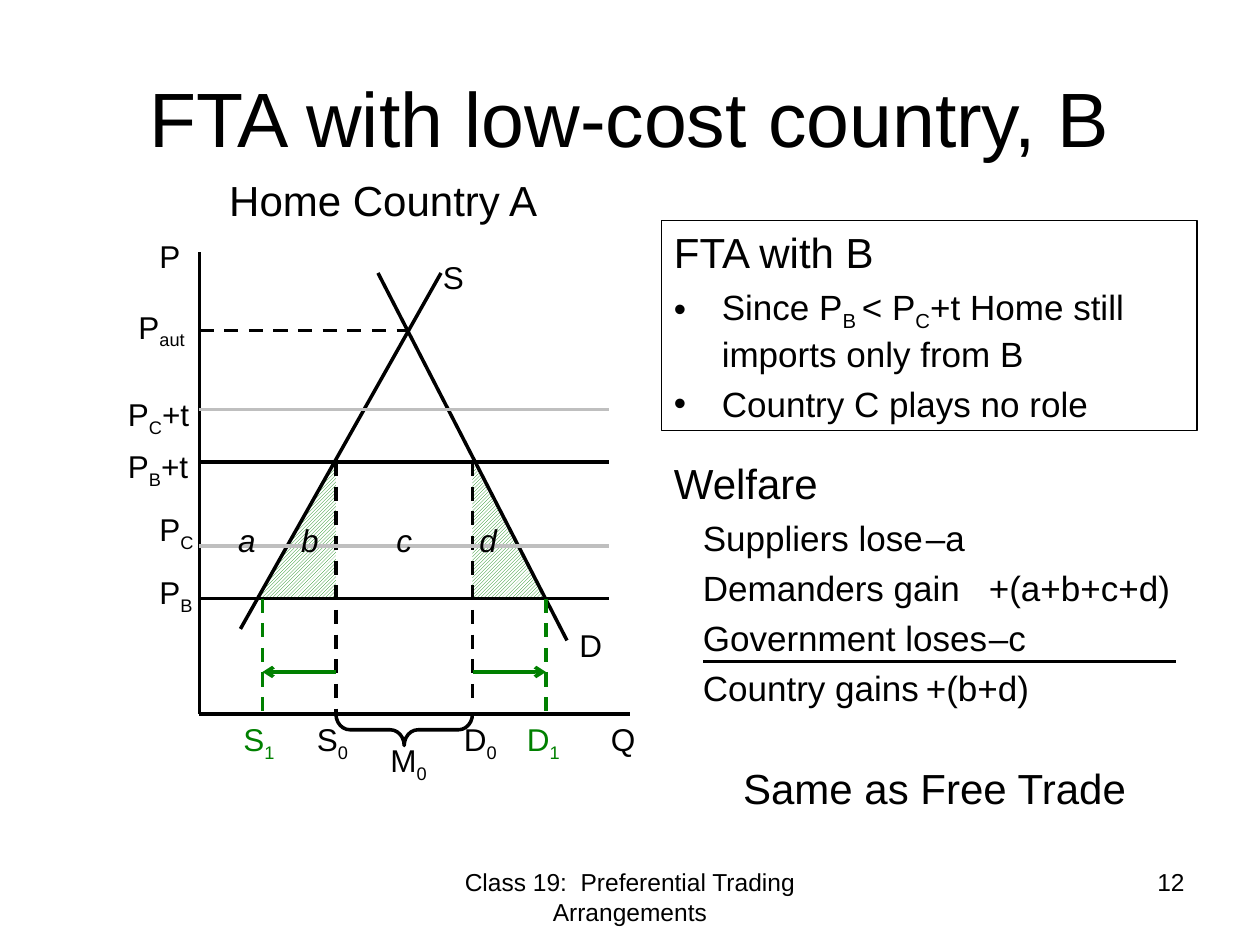
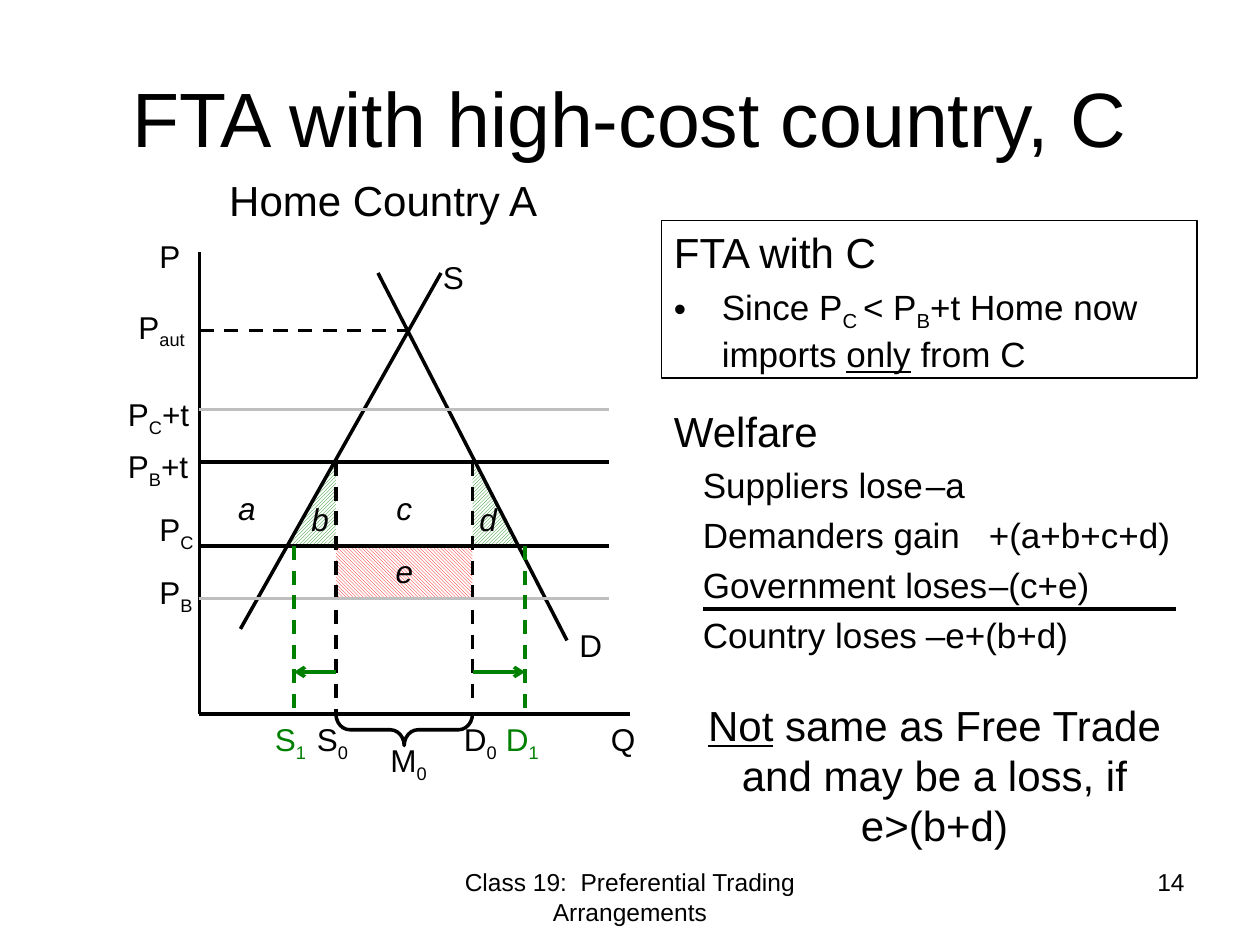
from lxml import etree
from pptx import Presentation
from pptx.dml.color import RGBColor
from pptx.enum.dml import MSO_LINE, MSO_PATTERN as Pattern
from pptx.enum.shapes import MSO_CONNECTOR, MSO_SHAPE as Shape
from pptx.enum.text import MSO_ANCHOR as Anchor, PP_ALIGN as Align
from pptx.oxml.ns import qn
from pptx.util import Inches, Pt

# ---- Content: "_" encloses a subscript, "*" encloses underlined text ----
FOOTER = "Class 19:  Preferential Trading Arrangements"
DIAGRAM_TITLE = "Home Country A"
SLIDES = [
    {
        "title": "FTA with low-cost country, B",
        "number": "12",
        "case": [("heading", "FTA with B"),
                 ("bullet", "Since P_B _< P_C_+t Home still imports only from B"),
                 ("bullet", "Country C plays no role")],
        "case_height": 20,
        "welfare": [("heading", "Welfare"),
                    ("row", "Suppliers lose\t–a"),
                    ("row", "Demanders gain\t+(a+b+c+d)"),
                    ("row", "Government loses\t–c"),
                    ("row", "Country gains\t+(b+d)")],
        "welfare_top": 43,
        "verdict": ["Same as Free Trade"],
        "verdict_top": 72,
        "new_price": "PB", "inactive_prices": ("PC+t", "PC"),
        "new_supply": 25, "new_demand": 52,
        "new_labels": {"S_1_": 22, "D_1_": 49},
        "areas": {"a": (19, 49), "b": (25, 49), "c": (34, 49), "d": (42, 49)},
    },
    {
        "title": "FTA with high-cost country, C",
        "number": "14",
        "case": [("heading", "FTA with C"),
                 ("bullet", "Since P_C _< P_B_+t Home now imports *only* from C")],
        "case_height": 15,
        "welfare": [("heading", "Welfare"),
                    ("row", "Suppliers lose\t–a"),
                    ("row", "Demanders gain\t+(a+b+c+d)"),
                    ("row", "Government loses\t–(c+e)"),
                    ("row", "Country loses\t–e+(b+d)")],
        "welfare_top": 38,
        "verdict": ["*Not* same as Free Trade", "and may be a loss, if e>(b+d)"],
        "verdict_top": 66,
        "new_price": "PC", "inactive_prices": ("PC+t", "PB"),
        "new_supply": 28, "new_demand": 50,
        "new_labels": {"S_1_": 25, "D_1_": 47},
        "areas": {"a": (19, 46), "b": (26, 47), "c": (34, 46), "d": (42, 47),
                  "e": (34, 52)},
    },
]

# ---- Grid: 12 units to the inch, so the slide is 120 by 90 ----
COLUMNS, ROWS = 120, 90
AXIS_LEFT, AXIS_BOTTOM, AXIS_TOP, AXIS_RIGHT = 19, 68, 24, 60
PRICES = {"PC+t": 39, "PB+t": 44, "PC": 52, "PB": 57}
PRICE_LINE_END = 58
OLD_SUPPLY, OLD_DEMAND = 32, 45
ARROW_ROW = 64
SUPPLY = ((42, 26), (22.9, 59.9))
DEMAND = ((36, 26), (54, 61))
AUTARKY = (39, 31.5)
PANEL_LEFT, PANEL_WIDTH = 63, 51

# Label: left, top, width
LABELS = {
    "P": (14, 22, 9), "S": (41, 24, 9), "P_aut_": (12, 28.7, 9),
    "P_C_+t": (11, 37, 9), "P_B_+t": (11, 42, 9),
    "P_C_": (14, 48, 6), "P_B_": (14, 54, 6), "D": (54, 59, 5),
    "Q": (57, 68, 9), "S_0_": (29, 68, 6), "D_0_": (43, 68, 6),
    "M_0_": (36, 70, 7),
}
LABEL_HEIGHT = 4.8

FONT = "Arial"
COLORS = {"ink": "000000", "paper": "FFFFFF", "inactive": "BFBFBF",
          "gain": "008000", "loss": "FF0000"}
# Style: size, left margin and first-line indent in inches, tab stop in inches
PANEL_STYLES = {"heading": (24, 0, 0, None),
                "bullet": (20, 0.38, -0.38, None),
                "row": (20, 0, 0.23, 2.54)}


def units(value):
    return Inches(value / 12)


def color(name):
    return RGBColor.from_string(COLORS[name])


def format_panel_paragraph(paragraph, kind):
    size, margin, indent, tab = PANEL_STYLES[kind]
    paragraph.space_before = Pt(0.23 * size)
    properties = paragraph._p.get_or_add_pPr()
    properties.set("marL", str(Inches(margin)))
    properties.set("indent", str(Inches(indent)))
    if kind == "bullet":
        etree.SubElement(properties, qn("a:buFont")).set("typeface", FONT)
        etree.SubElement(properties, qn("a:buChar")).set("char", "•")
    if tab:
        stop = etree.SubElement(etree.SubElement(properties, qn("a:tabLst")), qn("a:tab"))
        stop.set("pos", str(Inches(tab)))
        stop.set("algn", "l")
    return size


def write(slide, box, paragraphs, size=18, align=Align.LEFT, anchor=Anchor.TOP,
          ink="ink", italic=False, border=False):
    """Add a text box; a paragraph is a string or a (panel style, string) pair."""
    shape = slide.shapes.add_textbox(*map(units, box))
    if border:
        shape.line.color.rgb = color("ink")
        shape.line.width = Pt(0.75)
    frame = shape.text_frame
    frame.word_wrap = True
    frame.vertical_anchor = anchor
    for index, item in enumerate(paragraphs):
        paragraph = frame.paragraphs[0] if index == 0 else frame.add_paragraph()
        paragraph.alignment = align
        text, text_size = item, size
        if isinstance(item, tuple):
            kind, text = item
            text_size = format_panel_paragraph(paragraph, kind)
        for level, part in enumerate(text.split("_")):
            for mark, piece in enumerate(part.split("*")):
                if not piece:
                    continue
                run = paragraph.add_run()
                run.text = piece
                font = run.font
                font.name, font.size = FONT, Pt(text_size)
                font.color.rgb = color(ink)
                font.italic = italic
                if mark % 2:
                    font.underline = True
                if level % 2:
                    run._r.get_or_add_rPr().set("baseline", "-25000")


def draw_line(slide, start, end, ink="ink", dashed=False, arrow=False):
    line = slide.shapes.add_connector(MSO_CONNECTOR.STRAIGHT,
                                      *map(units, (*start, *end)))
    line.line.color.rgb = color(ink)
    line.line.width = Pt(2)
    if dashed:
        line.line.dash_style = MSO_LINE.DASH
    if arrow:
        outline = line.line._get_or_add_ln()
        etree.SubElement(outline, qn("a:tailEnd")).set("type", "arrow")
    etree.SubElement(line._element.spPr, qn("a:effectLst"))


def hatch(slide, preset, box, ink, pattern, mirrored=False):
    shape = slide.shapes.add_shape(preset, *map(units, box))
    shape.shadow.inherit = False
    shape.line.fill.background()
    shape.fill.patterned()
    shape.fill.pattern = pattern
    shape.fill.fore_color.rgb = color(ink)
    shape.fill.back_color.rgb = color("paper")
    if mirrored:
        shape._element.spPr.get_or_add_xfrm().set("flipH", "1")


def column_on(curve, row):
    (x1, y1), (x2, y2) = curve
    return x1 + (x2 - x1) * (row - y1) / (y2 - y1)


def draw_areas(slide, content):
    top, bottom = PRICES["PB+t"], PRICES[content["new_price"]]
    left, right = column_on(SUPPLY, bottom), column_on(DEMAND, bottom)
    height = bottom - top
    for box, mirrored in (((left, top, OLD_SUPPLY - left, height), True),
                          ((OLD_DEMAND, top, right - OLD_DEMAND, height), False)):
        hatch(slide, Shape.RIGHT_TRIANGLE, box, "gain",
              Pattern.DARK_UPWARD_DIAGONAL, mirrored)
    if "e" in content["areas"]:
        hatch(slide, Shape.RECTANGLE,
              (OLD_SUPPLY, bottom, OLD_DEMAND - OLD_SUPPLY, PRICES["PB"] - bottom),
              "loss", Pattern.DARK_DOWNWARD_DIAGONAL)


def draw_diagram(slide, content):
    draw_areas(slide, content)

    # Axes, curves and autarky price
    origin = (AXIS_LEFT, AXIS_BOTTOM)
    for start, end in ((origin, (AXIS_RIGHT, AXIS_BOTTOM)),
                       (origin, (AXIS_LEFT, AXIS_TOP)), SUPPLY, DEMAND):
        draw_line(slide, start, end)
    draw_line(slide, (AXIS_LEFT, AUTARKY[1]), AUTARKY, dashed=True)

    # Old quantities and the import brace
    draw_line(slide, (OLD_SUPPLY, PRICES["PB+t"]), (OLD_SUPPLY, AXIS_BOTTOM), dashed=True)
    draw_line(slide, (OLD_DEMAND, PRICES["PB+t"]), (OLD_DEMAND, AXIS_BOTTOM - 1), dashed=True)
    span, depth = OLD_DEMAND - OLD_SUPPLY, 3
    brace = slide.shapes.add_shape(
        Shape.LEFT_BRACE, units(OLD_SUPPLY + (span - depth) / 2),
        units(AXIS_BOTTOM + (depth - span) / 2), units(depth), units(span))
    brace.rotation = 270
    brace.adjustments[0] = 0.44
    brace.shadow.inherit = False
    brace.fill.background()
    brace.line.color.rgb = color("ink")
    brace.line.width = Pt(2)

    # Price lines
    for price, row in PRICES.items():
        ink = "inactive" if price in content["inactive_prices"] else "ink"
        draw_line(slide, (AXIS_LEFT, row), (PRICE_LINE_END, row), ink)

    # New quantities and the shifts towards them
    for old, new in ((OLD_SUPPLY, content["new_supply"]),
                     (OLD_DEMAND, content["new_demand"])):
        draw_line(slide, (new, PRICES[content["new_price"]]), (new, AXIS_BOTTOM),
                  "gain", dashed=True)
        draw_line(slide, (old, ARROW_ROW), (new, ARROW_ROW), "gain", arrow=True)

    # Labels
    for text, (left, top, width) in LABELS.items():
        write(slide, (left, top, width, LABEL_HEIGHT), [text])
    for text, left in content["new_labels"].items():
        write(slide, (left, AXIS_BOTTOM, 6, LABEL_HEIGHT), [text], ink="gain")
    for text, (left, top) in content["areas"].items():
        write(slide, (left, top, 9, LABEL_HEIGHT), [text], align=Align.CENTER, italic=True)


def draw_panels(slide, content):
    write(slide, (PANEL_LEFT, 21, PANEL_WIDTH, content["case_height"]),
          content["case"], border=True)
    top = content["welfare_top"]
    write(slide, (PANEL_LEFT, top, PANEL_WIDTH, 26), content["welfare"])
    draw_line(slide, (67, top + 20), (112, top + 20))
    write(slide, (66, content["verdict_top"], 46, 6), content["verdict"],
          size=24, align=Align.CENTER)


def draw_frame(slide, content):
    write(slide, (6, 3.6, 108, 15), [content["title"]], size=44,
          align=Align.CENTER, anchor=Anchor.MIDDLE)
    write(slide, (20, 16, 33, 6), [DIAGRAM_TITLE], size=24, align=Align.CENTER)
    write(slide, (41, 82, 38, 6.25), [FOOTER], size=14, align=Align.CENTER)
    write(slide, (86, 82, 28, 6.25), [content["number"]], size=14, align=Align.RIGHT)


def main():
    presentation = Presentation()
    presentation.slide_width, presentation.slide_height = units(COLUMNS), units(ROWS)
    for content in SLIDES:
        slide = presentation.slides.add_slide(presentation.slide_layouts[6])
        draw_diagram(slide, content)
        draw_panels(slide, content)
        draw_frame(slide, content)
    presentation.save("out.pptx")


if __name__ == "__main__":
    main()
